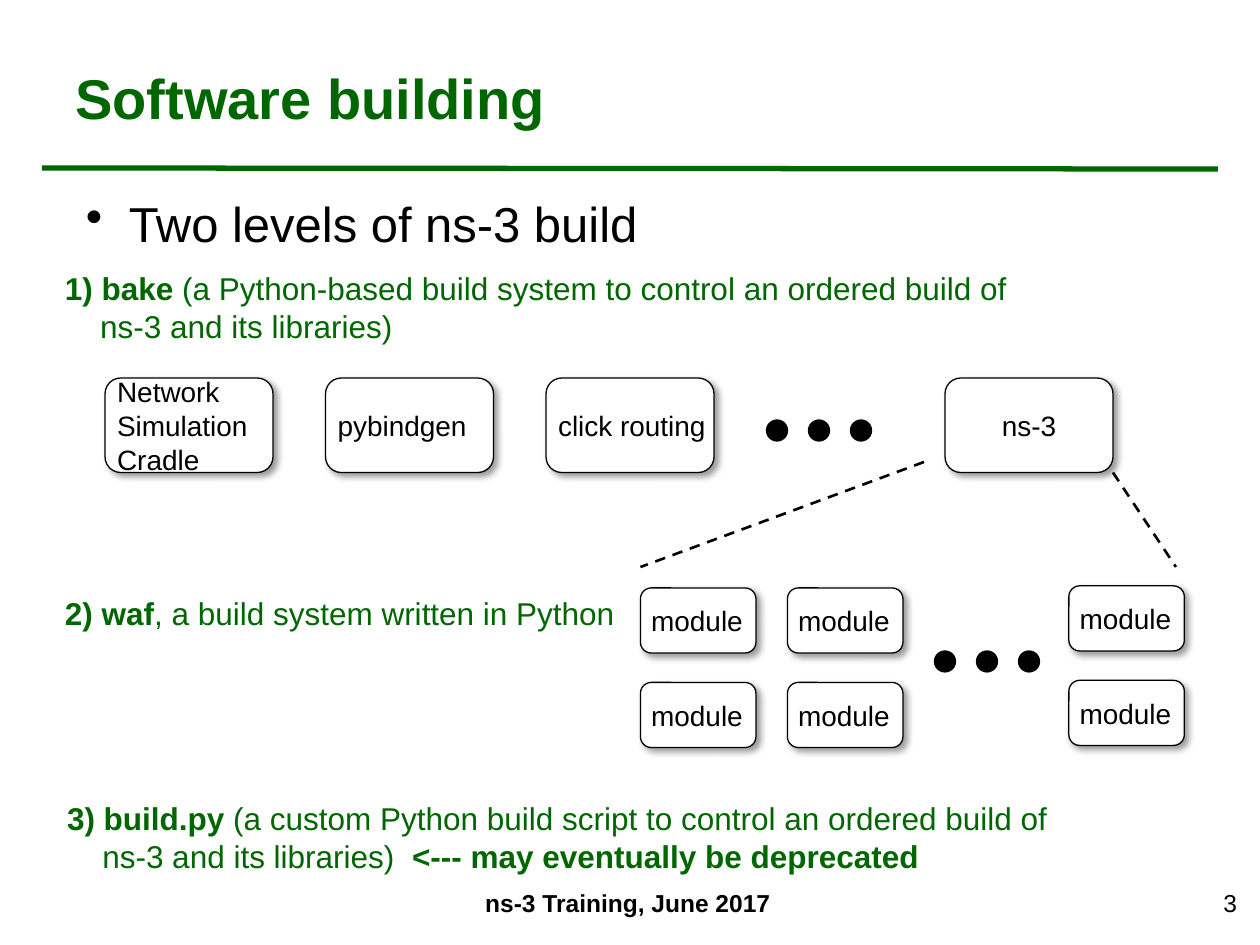
from typing import NamedTuple

from lxml import etree
from pptx import Presentation
from pptx.dml.color import RGBColor
from pptx.enum.dml import MSO_LINE
from pptx.enum.shapes import MSO_CONNECTOR, MSO_SHAPE
from pptx.enum.text import MSO_ANCHOR, PP_ALIGN
from pptx.oxml import parse_xml
from pptx.oxml.ns import nsdecls, qn
from pptx.util import Inches, Pt

ROUND = MSO_SHAPE.FLOWCHART_ALTERNATE_PROCESS
OVAL = MSO_SHAPE.OVAL
LINE = MSO_CONNECTOR.STRAIGHT
DASH = MSO_LINE.DASH
TOP, MID = MSO_ANCHOR.TOP, MSO_ANCHOR.MIDDLE
LEFT, CENTER, RIGHT = PP_ALIGN.LEFT, PP_ALIGN.CENTER, PP_ALIGN.RIGHT

COLORS = {"green": "006600", "ink": "000000", "paper": "FFFFFF"}
CELL = 1 / 12  # the slide is 120 columns by 90 rows


class Area(NamedTuple):
    col: float
    row: float
    wide: float
    high: float


class Run(NamedTuple):
    text: str
    bold: bool = False


class Para(NamedTuple):
    runs: list[Run]
    margin: float = 0
    bullet: bool = False


class Note(NamedTuple):
    area: Area
    paras: list[Para]
    size: int
    color: str = "ink"
    align: PP_ALIGN = LEFT
    anchor: MSO_ANCHOR = TOP


class Box(NamedTuple):
    area: Area
    lines: list[str]
    align: PP_ALIGN = LEFT


class Link(NamedTuple):
    start: tuple[float, float]
    end: tuple[float, float]
    color: str
    width: float
    dash: MSO_LINE | None = None


def cells(*counts: float) -> list[int]:
    return [Inches(count * CELL) for count in counts]


def rgb(name: str) -> RGBColor:
    return RGBColor.from_string(COLORS[name])


def write(frame, paras: list[Para], size: int, color: str,
          align: PP_ALIGN, anchor: MSO_ANCHOR) -> None:
    frame.word_wrap = True
    frame.vertical_anchor = anchor
    for i, para in enumerate(paras):
        line = frame.paragraphs[0] if i == 0 else frame.add_paragraph()
        line.alignment = align
        props = line._p.get_or_add_pPr()
        props.set("marL", str(Inches(para.margin)))
        if para.bullet:
            props.set("indent", str(-Inches(para.margin)))
            etree.SubElement(props, qn("a:buChar")).set("char", "•")
        for part in para.runs:
            run = line.add_run()
            run.text = part.text
            form = {"name": "Arial", "size": Pt(size), "bold": part.bold}
            for key, value in form.items():
                setattr(run.font, key, value)
            run.font.color.rgb = rgb(color)


def add_note(slide, note: Note) -> None:
    shape = slide.shapes.add_textbox(*cells(*note.area))
    write(shape.text_frame, note.paras, note.size, note.color,
          note.align, note.anchor)


def add_form(slide, kind: MSO_SHAPE, area: Area, fill: str):
    shape = slide.shapes.add_shape(kind, *cells(*area))
    shape.shadow.inherit = False
    shape.fill.solid()
    shape.fill.fore_color.rgb = rgb(fill)
    shape.line.color.rgb = rgb("ink")
    shape.line.width = Pt(0.75)
    return shape


def add_box(slide, box: Box) -> None:
    shape = add_form(slide, ROUND, box.area, "paper")
    glow = shape._element.spPr.find(qn("a:effectLst"))
    glow.append(parse_xml(
        f'<a:outerShdw {nsdecls("a")} blurRad="{Pt(4)}" dist="{Pt(3)}" '
        f'dir="2700000" algn="tl" rotWithShape="0">'
        f'<a:srgbClr val="{COLORS["ink"]}"><a:alpha val="40000"/></a:srgbClr>'
        f'</a:outerShdw>'))
    frame = shape.text_frame
    pads = {"margin_left": Inches(0.06 if box.align == LEFT else 0),
            "margin_right": 0, "margin_top": 0, "margin_bottom": 0}
    for key, value in pads.items():
        setattr(frame, key, value)
    write(frame, [Para([Run(text)]) for text in box.lines], 16, "ink",
          box.align, MID)


def add_dots(slide, col: float, row: float) -> None:
    for i in range(3):
        add_form(slide, OVAL, Area(col + 4 * i, row, 2, 2), "ink")


def add_link(slide, link: Link) -> None:
    line = slide.shapes.add_connector(LINE, *cells(*link.start, *link.end))
    etree.SubElement(line._element.spPr, qn("a:effectLst"))
    line.line.color.rgb = rgb(link.color)
    line.line.width = Pt(link.width)
    if link.dash is not None:
        line.line.dash_style = link.dash


NOTES = [
    Note(Area(6, 3.6, 107.6, 11.3), [Para([Run("Software building", True)])],
         32, "green", anchor=MID),
    Note(Area(7, 17.8, 107.6, 7),
         [Para([Run("Two levels of ns-3 build")], 0.34, True)], 28),
    Note(Area(5, 25, 98, 8.5), [
        Para([Run("1) bake", True),
              Run(" (a Python-based build system to control an ordered build of")]),
        Para([Run("ns-3 and its libraries)")], 0.28)], 18, "green"),
    Note(Area(5, 56, 56, 4.8), [
        Para([Run("2) waf", True),
              Run(", a build system written in Python")])], 18, "green"),
    Note(Area(5.2, 75.5, 98, 8.5), [
        Para([Run("3) build.py", True),
              Run(" (a custom Python build script to control an ordered build of")]),
        Para([Run("ns-3 and its libraries)  "),
              Run("<--- may eventually be deprecated", True)], 0.28)],
         18, "green"),
    Note(Area(41, 84, 37.6, 6), [Para([Run("ns-3 Training, June 2017", True)])],
         14, align=CENTER),
    Note(Area(91.4, 84, 27.6, 6), [Para([Run("3")])], 14, align=RIGHT),
]

# Libraries in one row, modules in two rows of three
BOXES = [
    Box(Area(col, 36, 16, 9), lines, align)
    for col, lines, align in [
        (10, ["Network", "Simulation", "Cradle"], LEFT),
        (31, ["pybindgen"], LEFT),
        (52, ["click routing"], LEFT),
        (90, ["ns-3"], CENTER)]
] + [
    Box(Area(col, row + 9 * i, 11, 6.2), ["module"])
    for col, row in [(61, 56), (75, 56), (101.8, 55.8)] for i in range(2)
]

DOTS = [(73, 40), (89, 62)]

LINKS = [
    Link((4, 16), (116, 16.1), "green", 3),
    Link((88, 44), (61, 54), "ink", 1.5, DASH),
    Link((106, 45), (112, 54), "ink", 1.5, DASH),
]


def main() -> None:
    deck = Presentation()
    deck.slide_width, deck.slide_height = cells(120, 90)
    slide = deck.slides.add_slide(deck.slide_layouts[6])
    for link in LINKS:
        add_link(slide, link)
    for box in BOXES:
        add_box(slide, box)
    for col, row in DOTS:
        add_dots(slide, col, row)
    for note in NOTES:
        add_note(slide, note)
    deck.save("out.pptx")


if __name__ == "__main__":
    main()
